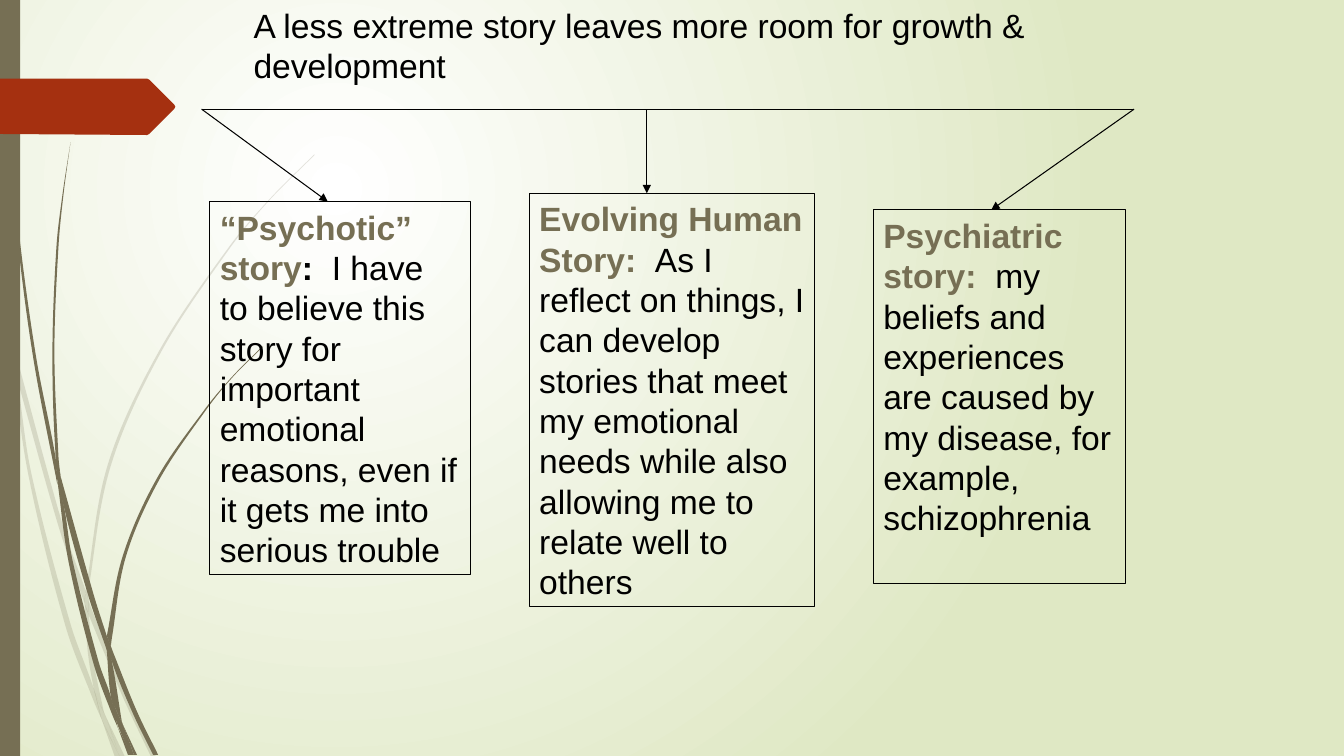
from dataclasses import dataclass

from lxml import etree
from pptx import Presentation
from pptx.dml.color import RGBColor
from pptx.enum.shapes import MSO_CONNECTOR, MSO_SHAPE
from pptx.enum.text import MSO_ANCHOR, PP_ALIGN
from pptx.oxml.ns import qn
from pptx.util import Cm, Pt

STRAIGHT = MSO_CONNECTOR.STRAIGHT
RECTANGLE = MSO_SHAPE.RECTANGLE
TOP = MSO_ANCHOR.TOP
LEFT = PP_ALIGN.LEFT

BLACK, OLIVE, RUST = "000000", "766F54", "A53010"
FONT, FONT_SIZE, LINE_SPACING = "Arial", Pt(24), Pt(28.8)
LINE_WIDTH = Pt(0.75)
OUTLINE_UNIT = 2.54  # centimetres per unit of the outline points

Point = tuple[float, float]


@dataclass
class Story:
    left: float
    top: float
    width: float
    height: float
    runs: list[tuple[str, str, bool]]  # text, colour, bold


@dataclass
class Line:
    start: Point
    end: Point
    arrow: bool = True


@dataclass
class Blade:
    """Part of a grass strand between two edges that both run downwards."""
    first: list[Point]
    second: list[Point]


STORIES = [
    Story(5.29, 5.08, 6.56, 9.4, [
        ("“Psychotic” story", OLIVE, True),
        (":  ", BLACK, True),
        ("I have to believe this story for important emotional reasons, "
         "even if it gets me into serious trouble", BLACK, False)]),
    Story(22.01, 5.29, 6.35, 9.42, [
        ("Psychiatric story:  ", OLIVE, True),
        ("my beliefs and experiences are caused by my disease, "
         "for example, schizophrenia", BLACK, False)]),
    Story(13.34, 4.87, 7.2, 10.41, [
        ("Evolving Human Story:  ", OLIVE, True),
        ("As I reflect on things, I can develop stories that meet my emotional "
         "needs while also allowing me to relate well to others", BLACK, False)]),
]
BAR_LEFT, BAR_RIGHT, BAR_Y = 5.08, 28.58, 2.75
LINES = [
    Line((BAR_LEFT, BAR_Y), (BAR_RIGHT, BAR_Y), arrow=False),
    Line((BAR_RIGHT, BAR_Y), (24.98, 5.29)),
    Line((16.3, BAR_Y), (16.3, 4.87)),
    Line((BAR_LEFT, BAR_Y), (8.26, 5.08)),
]
PALE_BLADES = [
    Blade([(0, 2.82), (.09, 3.22), (.11, 3.5)], [(0, 2.99), (.1, 3.44), (.11, 3.5)]),
    Blade([(.14, 3.45), (.62, 5.2), (.85, 5.86)], [(.17, 3.76), (.58, 5.22), (.84, 5.99)]),
    Blade([(.88, 5.96), (.92, 6.07), (1.27, 6.92), (1.55, 7.51)],
          [(.88, 6.1), (1.23, 6.94), (1.5, 7.51)]),
    Blade([(1.05, 7.11), (1.24, 7.51)], [(1.05, 7.11), (1.19, 7.51)]),
    Blade([(.11, 3.5), (.17, 3.76), (.31, 4.69), (.7, 6.19), (.93, 6.83), (1.01, 7.14)],
          [(.11, 3.5), (.28, 4.7), (.65, 6.21), (.92, 6.93), (1.01, 7.14)]),
    Blade([(.84, 5.99), (.88, 6.1), (.91, 6.46), (1.03, 7.06), (1.05, 7.11)],
          [(.84, 5.99), (.87, 6.46), (.93, 6.83), (.96, 6.92), (1.05, 7.11)]),
    Blade([(3.12, 1.53), (2.68, 1.97), (2.28, 2.44), (1.58, 3.48), (1.07, 4.61), (.85, 5.86)],
          [(3.12, 1.54), (2.68, 1.98), (2.29, 2.45), (1.6, 3.49), (1.1, 4.62),
           (.88, 5.84), (.88, 5.96)]),
    Blade([(1.01, 7.14), (1.14, 7.51)], [(1.01, 7.14), (1.19, 7.51)]),
    Blade([(.85, 5.86), (.88, 5.96), (.88, 6.1)], [(.85, 5.86), (.84, 5.99), (.88, 6.1)]),
    Blade([(.93, 6.83), (.96, 6.92), (1.05, 7.11), (1.19, 7.51)],
          [(.93, 6.83), (.99, 7.07), (1.01, 7.14), (1.19, 7.51)]),
]
DARK_BLADES = [
    Blade([(.03, 0), (.04, .48), (.07, 1.1), (.17, 2.33), (.33, 3.55), (.57, 4.81)],
          [(.04, 0), (.05, .48), (.08, 1.09), (.19, 2.32), (.36, 3.55), (.55, 4.53), (.57, 4.81)]),
    Blade([(.6, 4.72), (.93, 5.9), (1.06, 6.31)],
          [(.6, 4.72), (.64, 5.05), (.88, 5.92), (1.06, 6.45)]),
    Blade([(1.1, 6.41), (1.13, 6.49), (1.36, 7.06), (1.57, 7.49)],
          [(1.1, 6.41), (1.11, 6.56), (1.32, 7.08), (1.52, 7.49)]),
    Blade([(.57, 4.77), (.64, 5.05), (.72, 5.56), (.98, 6.57), (1.1, 6.91), (1.17, 7.22)],
          [(.57, 4.77), (.68, 5.57), (.93, 6.59), (1.11, 7.08), (1.17, 7.22)]),
    Blade([(.7, 1.41), (.62, 1.93), (.56, 2.45), (.52, 3.49), (.55, 4.49), (.6, 4.72)],
          [(.7, 1.41), (.63, 1.93), (.58, 2.45), (.54, 3.49), (.58, 4.53), (.6, 4.72)]),
    Blade([(1.22, 7.19), (1.36, 7.49)], [(1.22, 7.19), (1.33, 7.49)]),
    Blade([(.55, 4.49), (.6, 4.72), (.64, 5.05)], [(.55, 4.49), (.57, 4.77), (.64, 5.05)]),
    Blade([(2.6, 3.44), (2.31, 3.73), (2.04, 4.05), (1.56, 4.74), (1.22, 5.51), (1.06, 6.31)],
          [(2.61, 3.44), (2.31, 3.74), (2.05, 4.06), (1.58, 4.76), (1.25, 5.52),
           (1.11, 6.33), (1.1, 6.41)]),
    Blade([(1.17, 7.22), (1.31, 7.49)], [(1.17, 7.22), (1.27, 7.49)]),
    Blade([(1.06, 6.45), (1.11, 6.56), (1.21, 7.16), (1.22, 7.19)],
          [(1.06, 6.45), (1.1, 6.91), (1.16, 7.06), (1.22, 7.19)]),
    Blade([(1.06, 6.31), (1.1, 6.41), (1.11, 6.56)], [(1.06, 6.31), (1.06, 6.45), (1.11, 6.56)]),
    Blade([(1.1, 6.91), (1.16, 7.06), (1.22, 7.19), (1.33, 7.49)],
          [(1.1, 6.91), (1.16, 7.17), (1.3, 7.49)]),
]
PAGE_TAG = [(0, .78), (1.46, .78), (1.48, .79), (1.73, 1.04), (1.74, 1.06),
            (1.73, 1.08), (1.48, 1.33), (1.46, 1.34), (0, 1.33)]


def color(value: str) -> RGBColor:
    return RGBColor.from_string(value)


def to_emu(point: Point) -> tuple[int, int]:
    return Cm(point[0] * OUTLINE_UNIT), Cm(point[1] * OUTLINE_UNIT)


def curve_handles(edge: list[Point]) -> list[tuple[Point, ...]]:
    """Two control points for each step of an edge whose y always grows."""
    last = len(edge) - 1
    slopes = []
    for index in range(last + 1):
        (x0, y0), (x1, y1) = edge[max(index - 1, 0)], edge[min(index + 1, last)]
        slopes.append((x1 - x0) / (y1 - y0))
    handles = []
    for index in range(last):
        (x0, y0), (x1, y1) = edge[index], edge[index + 1]
        third = (y1 - y0) / 3
        handles.append(((x0 + slopes[index] * third, y0 + third),
                        (x1 - slopes[index + 1] * third, y1 - third)))
    return handles


def style_shape(shape, fill: str) -> None:
    shape.shadow.inherit = False
    shape.fill.solid()
    shape.fill.fore_color.rgb = color(fill)
    shape.line.fill.background()


def add_outline(shapes, points: list[Point], fill: str):
    corners = [to_emu(point) for point in points]
    builder = shapes.build_freeform(*corners[0])
    builder.add_line_segments(corners[1:])
    shape = builder.convert_to_shape()
    style_shape(shape, fill)
    return shape


def add_blade(shapes, blade: Blade, opacity: int) -> None:
    back = blade.second[::-1]
    handles = curve_handles(blade.first)
    if back[0] == blade.first[-1]:
        back = back[1:]
    else:
        handles.append(())
    handles += [pair[::-1] for pair in reversed(curve_handles(blade.second))]
    shape = add_outline(shapes, blade.first + back, OLIVE)
    for segment, pair in zip(list(shape.element.iter(qn("a:lnTo"))), handles):
        if pair:
            segment.tag = qn("a:cubicBezTo")
        for position, handle in enumerate(pair):
            x, y = to_emu(handle)
            point = etree.Element(qn("a:pt"), x=str(x - shape.left), y=str(y - shape.top))
            segment.insert(position, point)
    if opacity < 100:
        fill_color = shape.element.find(".//" + qn("a:srgbClr"))
        etree.SubElement(fill_color, qn("a:alpha"), val=str(opacity * 1000))


def add_strands(slide, blades: list[Blade], opacity: int) -> None:
    group = slide.shapes.add_group_shape()
    for blade in blades:
        add_blade(group.shapes, blade, opacity)


def write(shape, runs: list[tuple[str, str, bool]]) -> None:
    frame = shape.text_frame
    frame.word_wrap = True
    frame.vertical_anchor = TOP
    paragraph = frame.paragraphs[0]
    paragraph.alignment = LEFT
    paragraph.line_spacing = LINE_SPACING
    for text, run_color, bold in runs:
        run = paragraph.add_run()
        run.text = text
        run.font.name, run.font.size, run.font.bold = FONT, FONT_SIZE, bold
        run.font.color.rgb = color(run_color)


def set_line(line) -> None:
    line.color.rgb = color(BLACK)
    line.width = LINE_WIDTH


def add_story(slide, story: Story) -> None:
    shape = slide.shapes.add_shape(
        RECTANGLE, Cm(story.left), Cm(story.top), Cm(story.width), Cm(story.height))
    shape.shadow.inherit = False
    shape.fill.background()
    set_line(shape.line)
    write(shape, story.runs)


def add_line(slide, line: Line) -> None:
    connector = slide.shapes.add_connector(
        STRAIGHT, *(Cm(value) for value in line.start + line.end))
    set_line(connector.line)
    if line.arrow:
        etree.SubElement(connector.element.find(".//" + qn("a:ln")), qn("a:tailEnd"), type="triangle")
    etree.SubElement(connector.element.find(qn("p:spPr")), qn("a:effectLst"))


def set_background(slide) -> None:
    """Fill with a round gradient centred a quarter of the way in."""
    fill = slide.background.fill
    fill.gradient()
    for stop, position, value in zip(fill.gradient_stops, (0, 1), ("FFFFFF", "DFE8C4")):
        stop.position = position
        stop.color.rgb = color(value)
    gradient = slide.element.find(".//" + qn("a:gradFill"))
    gradient.remove(gradient.find(qn("a:lin")))
    circle = etree.SubElement(gradient, qn("a:path"), {"path": "circle"})
    etree.SubElement(circle, qn("a:fillToRect"), l="50000", t="50000", r="100000", b="100000")


def main() -> None:
    presentation = Presentation()
    presentation.slide_width, presentation.slide_height = Cm(33.87), Cm(19.05)
    slide = presentation.slides.add_slide(presentation.slide_layouts[6])
    set_background(slide)
    add_strands(slide, PALE_BLADES, 20)
    add_strands(slide, DARK_BLADES, 100)
    side_bar = slide.shapes.add_shape(RECTANGLE, 0, 0, Cm(0.51), presentation.slide_height)
    style_shape(side_bar, OLIVE)
    add_outline(slide.shapes, PAGE_TAG, RUST)
    for story in STORIES:
        add_story(slide, story)
    for line in LINES:
        add_line(slide, line)
    title = slide.shapes.add_textbox(Cm(6.14), 0, Cm(22.65), Cm(2.31))
    write(title, [("A less extreme story leaves more room for growth & development", BLACK, False)])
    presentation.save("out.pptx")


if __name__ == "__main__":
    main()
